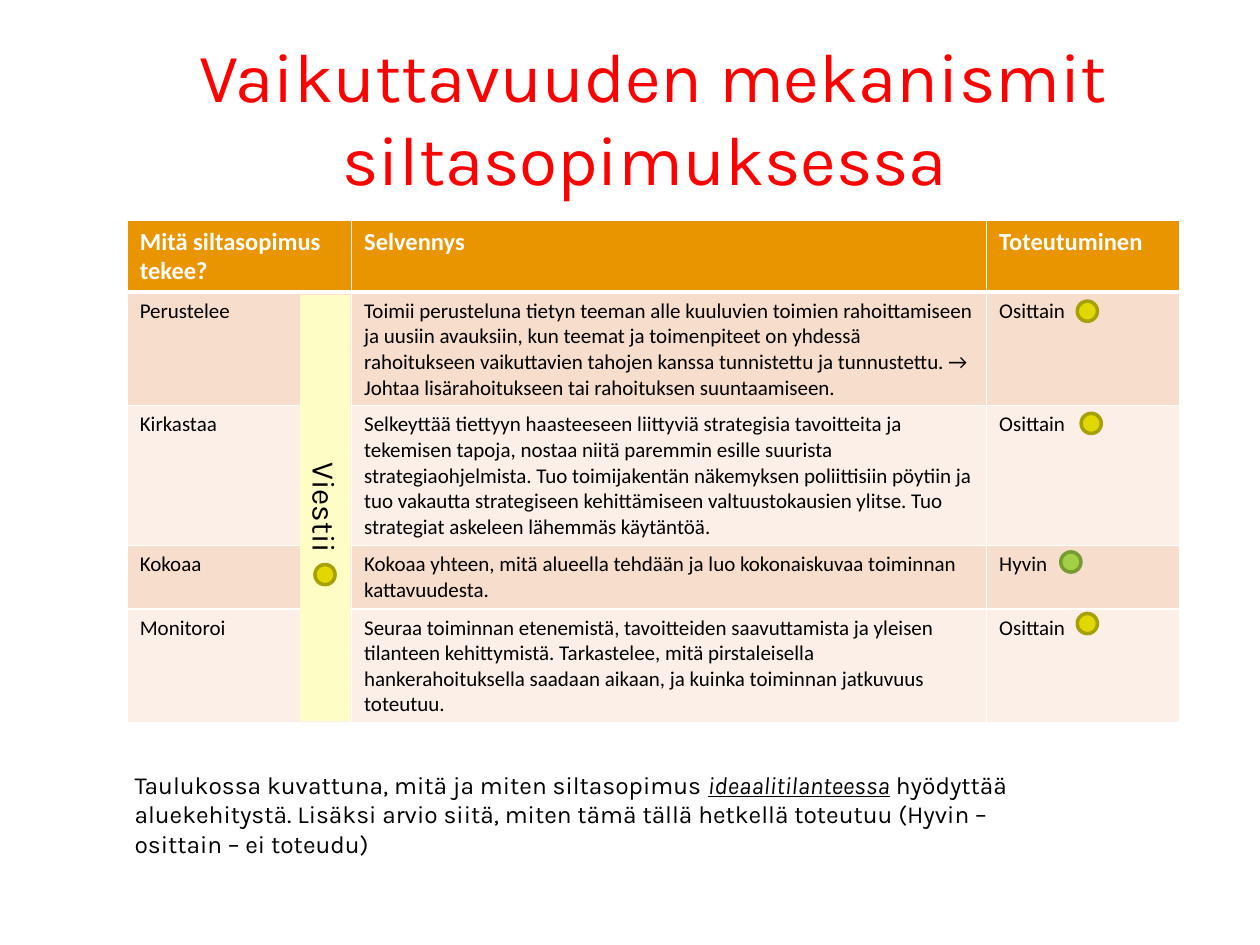
"""Build a slide with a table on how a bridge agreement makes an impact."""
from lxml.etree import SubElement
from pptx import Presentation
from pptx.dml.color import RGBColor
from pptx.enum.shapes import MSO_SHAPE
from pptx.enum.text import MSO_ANCHOR, PP_ALIGN
from pptx.oxml.ns import qn
from pptx.util import Pt

RED = RGBColor(0xFF, 0x00, 0x00)
BLACK = RGBColor(0x00, 0x00, 0x00)
WHITE = RGBColor(0xFF, 0xFF, 0xFF)
ORANGE = RGBColor(0xE8, 0x95, 0x00)
DARK_BAND = RGBColor(0xF6, 0xDD, 0xCC)
LIGHT_BAND = RGBColor(0xFB, 0xEF, 0xE7)
PALE_YELLOW = RGBColor(0xFF, 0xFD, 0xC6)
YELLOW = RGBColor(0xE0, 0xD8, 0x00)
OLIVE = RGBColor(0xA6, 0xA0, 0x00)
GREEN = RGBColor(0xA1, 0xD0, 0x45)
DARK_GREEN = RGBColor(0x77, 0x9A, 0x33)

COLUMN_WIDTHS = (128.2, 362.9, 110.1)
ROW_HEIGHTS = (40, 65, 80, 36, 65)
ROWS = (
    ("Mitä siltasopimus tekee?", "Selvennys", "Toteutuminen"),
    ("Perustelee",
     "Toimii perusteluna tietyn teeman alle kuuluvien toimien rahoittamiseen ja uusiin "
     "avauksiin, kun teemat ja toimenpiteet on yhdessä rahoitukseen vaikuttavien tahojen "
     "kanssa tunnistettu ja tunnustettu. → Johtaa lisärahoitukseen tai rahoituksen "
     "suuntaamiseen.",
     "Osittain"),
    ("Kirkastaa",
     "Selkeyttää tiettyyn haasteeseen liittyviä strategisia tavoitteita ja tekemisen "
     "tapoja, nostaa niitä paremmin esille suurista strategiaohjelmista. Tuo "
     "toimijakentän näkemyksen poliittisiin pöytiin ja tuo vakautta strategiseen "
     "kehittämiseen valtuustokausien ylitse. Tuo strategiat askeleen lähemmäs käytäntöä.",
     "Osittain"),
    ("Kokoaa",
     "Kokoaa yhteen, mitä alueella tehdään ja luo kokonaiskuvaa toiminnan "
     "kattavuudesta.",
     "Hyvin"),
    ("Monitoroi",
     "Seuraa toiminnan etenemistä, tavoitteiden saavuttamista ja yleisen tilanteen "
     "kehittymistä. Tarkastelee, mitä pirstaleisella hankerahoituksella saadaan aikaan, "
     "ja kuinka toiminnan jatkuvuus toteutuu.",
     "Osittain"),
)
DOTS = (
    (615.6, 172.1, YELLOW, OLIVE),
    (617.8, 236.2, YELLOW, OLIVE),
    (606.2, 315.4, GREEN, DARK_GREEN),
    (615.6, 350.6, YELLOW, OLIVE),
    (180, 322.6, YELLOW, OLIVE),
)
DOT_SIZE = 11.5


def add_text(paragraph, text, size=14, font="Karla", color=BLACK, bold=False,
             emphasis=False, align=PP_ALIGN.LEFT):
    """Append a formatted run to a paragraph."""
    paragraph.alignment = align
    run = paragraph.add_run()
    run.text = text
    run.font.size = Pt(size)
    run.font.name = font
    run.font.color.rgb = color
    run.font.bold = bold
    run.font.italic = emphasis
    run.font.underline = emphasis


def add_text_box(slide, left, top, width, height, anchor=MSO_ANCHOR.TOP):
    """Add a wrapping text box and return its first paragraph."""
    shape = slide.shapes.add_textbox(Pt(left), Pt(top), Pt(width), Pt(height))
    shape.text_frame.word_wrap = True
    shape.text_frame.vertical_anchor = anchor
    return shape.text_frame.paragraphs[0]


def add_filled_shape(slide, kind, left, top, width, height, fill, line=None):
    """Add a preset shape without shadow, outlined only if a line colour is given."""
    shape = slide.shapes.add_shape(kind, Pt(left), Pt(top), Pt(width), Pt(height))
    shape.shadow.inherit = False
    shape.fill.solid()
    shape.fill.fore_color.rgb = fill
    if line is None:
        shape.line.fill.background()
    else:
        shape.line.color.rgb = line
        shape.line.width = Pt(2)
    return shape


def set_borders(cell, top, bottom):
    """Give a cell white borders of the given top and bottom widths."""
    properties = cell._tc.get_or_add_tcPr()
    for tag, width in (("a:lnL", 1), ("a:lnR", 1), ("a:lnT", top), ("a:lnB", bottom)):
        border = SubElement(properties, qn(tag), w=str(Pt(width)))
        fill = SubElement(border, qn("a:solidFill"))
        SubElement(fill, qn("a:srgbClr"), val=str(WHITE))


def add_mechanism_table(slide):
    """Add the table with an orange header and banded rows."""
    table = slide.shapes.add_table(
        len(ROWS), len(COLUMN_WIDTHS), Pt(72.7), Pt(126),
        Pt(sum(COLUMN_WIDTHS)), Pt(sum(ROW_HEIGHTS))).table
    for column, width in zip(table.columns, COLUMN_WIDTHS):
        column.width = Pt(width)
    for index, (row, height, texts) in enumerate(zip(table.rows, ROW_HEIGHTS, ROWS)):
        row.height = Pt(height)
        header = index == 0
        band = DARK_BAND if index % 2 else LIGHT_BAND
        for cell, text in zip(row.cells, texts):
            set_borders(cell, top=3 if index == 1 else 1, bottom=3 if header else 1)
            cell.fill.solid()
            cell.fill.fore_color.rgb = ORANGE if header else band
            add_text(cell.text_frame.paragraphs[0], text, font="Calibri", bold=header,
                     size=14 if header else 12, color=WHITE if header else BLACK)


def add_message_band(slide):
    """Add the rotated band that runs across the body rows."""
    band = add_filled_shape(slide, MSO_SHAPE.RECTANGLE, 64.1, 275.8, 243.4, 28.8,
                            PALE_YELLOW)
    band.rotation = 90
    band.text_frame.word_wrap = True
    band.text_frame.vertical_anchor = MSO_ANCHOR.TOP
    add_text(band.text_frame.paragraphs[0], "Viestii", size=18, align=PP_ALIGN.CENTER)


def main():
    """Build and save the slide."""
    presentation = Presentation()
    presentation.slide_width, presentation.slide_height = Pt(720), Pt(540)
    slide = presentation.slides.add_slide(presentation.slide_layouts[6])

    title = add_text_box(slide, 72.7, 21.6, 601.2, 90, MSO_ANCHOR.MIDDLE)
    add_text(title, "Vaikuttavuuden mekanismit siltasopimuksessa ", size=39.6,
             color=RED, align=PP_ALIGN.CENTER)
    add_mechanism_table(slide)

    caption = add_text_box(slide, 69.8, 436.3, 547.9, 58.3)
    add_text(caption, "Taulukossa kuvattuna, mitä ja miten siltasopimus ")
    add_text(caption, "ideaalitilanteessa", emphasis=True)
    add_text(caption, " hyödyttää aluekehitystä. Lisäksi arvio siitä, miten tämä tällä "
                      "hetkellä toteutuu (Hyvin – osittain – ei toteudu)")

    add_message_band(slide)
    for left, top, fill, line in DOTS:
        add_filled_shape(slide, MSO_SHAPE.OVAL, left, top, DOT_SIZE, DOT_SIZE, fill, line)
    presentation.save("out.pptx")


if __name__ == "__main__":
    main()
